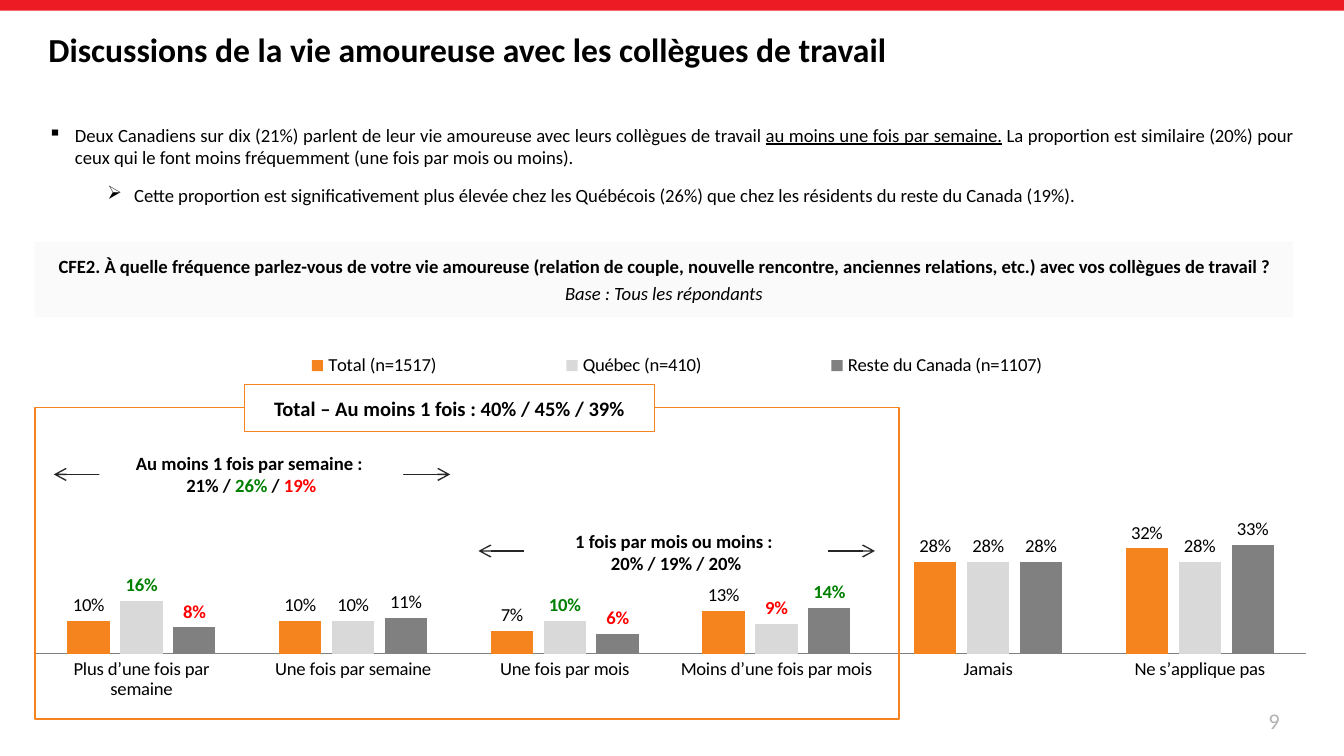
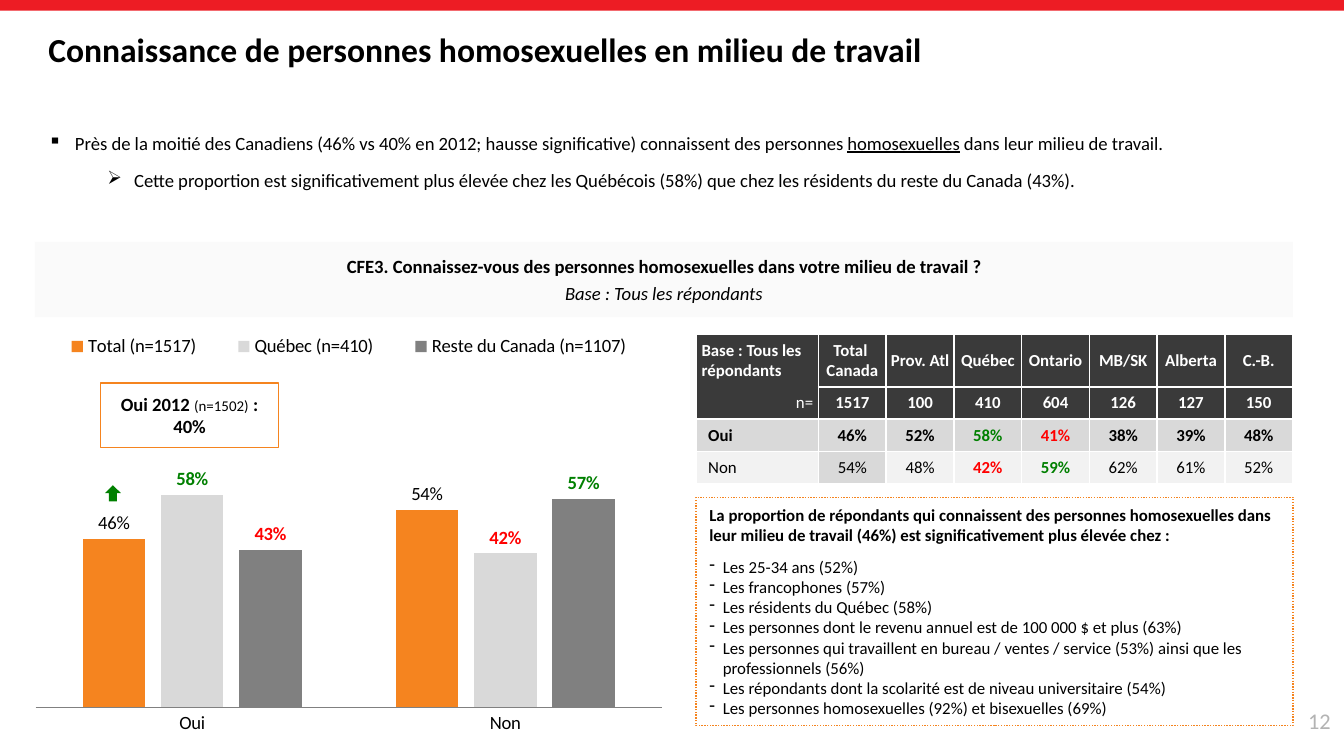
"""Build two survey-result slides about love life and homosexuality at work."""
from lxml.etree import SubElement
from pptx import Presentation
from pptx.chart.data import CategoryChartData
from pptx.dml.color import RGBColor
from pptx.enum.chart import XL_CHART_TYPE, XL_LABEL_POSITION, XL_LEGEND_POSITION, XL_TICK_MARK
from pptx.enum.dml import MSO_LINE
from pptx.enum.shapes import MSO_CONNECTOR, MSO_SHAPE as SHAPE
from pptx.enum.text import MSO_ANCHOR as ANCHOR, PP_ALIGN as ALIGN
from pptx.oxml.ns import qn
from pptx.util import Inches, Pt

RED_BAND, ORANGE, LIGHT, GREY = "ED1C24", "F5841F", "D9D9D9", "808080"
BLACK, WHITE, GREEN, RED = "000000", "FFFFFF", "008000", "FF0000"
DARK, PALE, PANEL, NUMBER, INK = "3A3A3A", "F2F2F2", "FAFAFA", "B3B3B3", "262626"
FONT = "Calibri"
rgb = RGBColor.from_string


def write(frame, lines, size=10, bold=False, color=BLACK, align=ALIGN.CENTER,
          anchor=ANCHOR.MIDDLE, before=None, after=None, bullets=(), hang=0.2):
    """Fill a text frame; a line is a list of strings or (string, font changes)."""
    frame.word_wrap = True
    frame.vertical_anchor = anchor
    for index, line in enumerate(lines):
        para = frame.paragraphs[0] if index == 0 else frame.add_paragraph()
        para.alignment = align
        if before and index:
            para.space_before = Pt(before)
        if after:
            para.space_after = Pt(after)
        bullet = bullets[index] if index < len(bullets) else None
        if bullet:
            mark, left = bullet
            props = para._p.get_or_add_pPr()
            props.set("marL", str(Inches(left)))
            props.set("indent", str(-Inches(hang)))
            SubElement(props, qn("a:buChar"), char=mark)
        para.font.name, para.font.size, para.font.bold = FONT, Pt(size), bold
        para.font.color.rgb = rgb(color)
        for part in line:
            text, changes = (part, {}) if isinstance(part, str) else part
            span = para.add_run()
            span.text = text
            if bullet:
                span.font.size = Pt(size)
            for name, value in changes.items():
                if name == "color":
                    span.font.color.rgb = rgb(value)
                else:
                    setattr(span.font, name, value)


def add_box(page, at, fill=None, line=None, kind=SHAPE.RECTANGLE):
    """Add a preset shape without shadow."""
    box = page.shapes.add_shape(kind, *map(Inches, at))
    box.shadow.inherit = False
    if fill:
        box.fill.solid()
        box.fill.fore_color.rgb = rgb(fill)
    else:
        box.fill.background()
    if line:
        box.line.color.rgb = rgb(line)
        box.line.width = Pt(0.75)
    else:
        box.line.fill.background()
    return box


SERIES = [("Total (n=1517)", ORANGE), ("Québec (n=410)", LIGHT), ("Reste du Canada (n=1107)", GREY)]
SLIDES = [
    dict(
        title="Discussions de la vie amoureuse avec les collègues de travail",
        number="9", number_left=7.29, body_top=0.87,
        body=[
            ["Deux Canadiens sur dix (21%) parlent de leur vie amoureuse avec leurs collègues de travail ",
             ("au moins une fois par semaine.", {"underline": True}),
             " La proportion est similaire (20%) pour ceux qui le font moins fréquemment "
             "(une fois par mois ou moins). "],
            ["Cette proportion est significativement plus élevée chez les Québécois (26%) "
             "que chez les résidents du reste du Canada (19%)."]],
        question="CFE2. À quelle fréquence parlez-vous de votre vie amoureuse (relation de couple, "
                 "nouvelle rencontre, anciennes relations, etc.) avec vos collègues de travail ?",
        chart_at=(0.26, 2.31, 9.46, 2.9), legend_at=(0.12, 0.1, 0.77, 0.09),
        categories=["Plus d’une fois par semaine", "Une fois par semaine", "Une fois par mois",
                    "Moins d’une fois par mois", "Jamais", "Ne s’applique pas"],
        values=[(0.1, 0.1, 0.07, 0.13, 0.28, 0.32), (0.16, 0.1, 0.1, 0.09, 0.28, 0.28),
                (0.08, 0.11, 0.06, 0.14, 0.28, 0.33)],
        significant=(0, 2, 3)),
    dict(
        title="Connaissance de personnes homosexuelles en milieu de travail",
        number="12", number_left=7.67, body_top=0.93,
        body=[
            ["Près de la moitié des Canadiens (46% vs 40% en 2012; hausse significative) "
             "connaissent des personnes ",
             ("homosexuelles", {"underline": True}), " dans leur milieu de travail. "],
            ["Cette proportion est significativement plus élevée chez les Québécois (58%) "
             "que chez les résidents du reste du Canada (43%)."]],
        question="CFE3. Connaissez-vous des personnes homosexuelles dans votre milieu de travail ?",
        chart_at=(0.26, 2.42, 4.67, 3.16), legend_at=(0, 0.01, 1, 0.08),
        categories=["Oui", "Non"],
        values=[(0.46, 0.54), (0.58, 0.42), (0.43, 0.57)],
        significant=(0, 1)),
]

deck = Presentation()
deck.slide_width = Inches(10)
deck.slide_height = deck.slide_width * 9 // 16
pages = []
for content in SLIDES:
    page = deck.slides.add_slide(deck.slide_layouts[5])
    pages.append(page)
    add_box(page, (0, 0, 10, 0.08), RED_BAND)
    title = page.shapes.title
    title.left, title.top, title.width, title.height = map(Inches, (0.26, 0.08, 7.92, 0.57))
    write(title.text_frame, [[content["title"]]], 18, True, align=ALIGN.LEFT)
    number = page.shapes.add_textbox(*map(Inches, (content["number_left"], 5.21, 2.33, 0.3)))
    write(number.text_frame, [[content["number"]]], 12, color=NUMBER, align=ALIGN.RIGHT)
    top = content["body_top"]
    body = page.shapes.add_textbox(*map(Inches, (0.26, top, 9.46, 1.72 - top)))
    write(body.text_frame, content["body"], align=ALIGN.JUSTIFY, anchor=ANCHOR.TOP,
          before=2, after=6, bullets=[("▪", 0.2), ("➢", 0.64)])
    panel = add_box(page, (0.26, 1.8, 9.36, 0.56), PANEL)
    base = ("Base : Tous les répondants", {"bold": False, "italic": True})
    write(panel.text_frame, [[content["question"]], [base]], bold=True, before=2)

    data = CategoryChartData(number_format="0%")
    data.categories = content["categories"]
    for (name, _), values in zip(SERIES, content["values"]):
        data.add_series(name, values)
    chart = page.shapes.add_chart(XL_CHART_TYPE.COLUMN_CLUSTERED,
                                  *map(Inches, content["chart_at"]), data).chart
    chart.has_title = False
    chart.font.name, chart.font.size = "Arial", Pt(9)
    chart.font.color.rgb = rgb(BLACK)
    chart.has_legend = True
    chart.legend.position = XL_LEGEND_POSITION.TOP
    chart.legend.include_in_layout = False
    chart.legend.font.name, chart.legend.font.size = FONT, Pt(10)
    axis = chart.category_axis
    axis.major_tick_mark = axis.minor_tick_mark = XL_TICK_MARK.NONE
    axis.tick_labels.font.name, axis.tick_labels.font.size = FONT, Pt(10)
    axis.format.line.color.rgb = rgb(GREY)
    scale = chart.value_axis
    scale.minimum_scale, scale.maximum_scale, scale.major_unit = 0, 0.8, 0.1
    scale.has_major_gridlines = False
    scale.visible = False
    plot = chart.plots[0]
    plot.gap_width, plot.overlap, plot.vary_by_categories = 150, -25, False
    for rank, (series, (_, color)) in enumerate(zip(plot.series, SERIES)):
        series.format.fill.solid()
        series.format.fill.fore_color.rgb = rgb(color)
        labels = series.data_labels
        labels.show_value = True
        labels.number_format, labels.number_format_is_linked = "0%", False
        labels.position = XL_LABEL_POSITION.OUTSIDE_END
        labels.font.name, labels.font.size = FONT, Pt(10)
        labels.font.color.rgb = rgb(BLACK)
        if rank == 0:
            continue
        for index in content["significant"]:
            own, other = content["values"][rank][index], content["values"][3 - rank][index]
            label = series.points[index].data_label
            label.font.name, label.font.size, label.font.bold = FONT, Pt(10), True
            label.font.color.rgb = rgb(GREEN if own > other else RED)
            label.position = XL_LABEL_POSITION.OUTSIDE_END

    area = chart._chartSpace.find(".//" + qn("c:plotArea"))
    for old in area.findall(qn("c:layout")):
        area.remove(old)
    for holder, place, inner, spot in ((area, 0, True, (0, 0.21, 1, 0.69)),
                                       (chart.legend._element, 1, False, content["legend_at"])):
        layout = SubElement(holder, qn("c:layout"))
        holder.insert(place, layout)
        manual = SubElement(layout, qn("c:manualLayout"))
        if inner:
            SubElement(manual, qn("c:layoutTarget"), val="inner")
        for mode in ("xMode", "yMode"):
            SubElement(manual, qn("c:" + mode), val="edge")
        for side, share in zip("xywh", spot):
            SubElement(manual, qn("c:" + side), val=str(share))

frequency, acquaintance = pages

GROUPS = [
    (0.4, 3.53, 0.74, 3.32, [["Au moins 1 fois par semaine : "],
                             ["21% / ", ("26%", {"color": GREEN}), " / ", ("19%", {"color": RED})]]),
    (3.56, 4.1, 3.9, 3.9, [["1 fois par mois ou moins : "], ["20% / 19% / 20%"]]),
]
for start, height, left, top, lines in GROUPS:
    arrow = frequency.shapes.add_connector(
        MSO_CONNECTOR.STRAIGHT, *map(Inches, (start, height, start + 2.95, height)))
    arrow.line.color.rgb = rgb(INK)
    arrow.line.width = Pt(0.75)
    for end in ("a:headEnd", "a:tailEnd"):
        SubElement(arrow.line._get_or_add_ln(), qn(end), type="arrow")
    SubElement(arrow._element.spPr, qn("a:effectLst"))
    box = add_box(frequency, (left, top, 2.26, 0.42), WHITE)
    frame = box.text_frame
    frame.margin_left = frame.margin_right = frame.margin_top = frame.margin_bottom = Inches(0.04)
    write(frame, lines, bold=True, anchor=ANCHOR.TOP)
add_box(frequency, (0.26, 3.03, 6.43, 2.32), line=ORANGE)
total = add_box(frequency, (1.82, 2.86, 3.05, 0.35), WHITE, ORANGE, SHAPE.FLOWCHART_PROCESS)
write(total.text_frame, [["Total – Au moins 1 fois : 40% / 45% / 39%"]], 11, True)

ROWS = [
    ["Base : Tous les répondants", "Total \nCanada", "Prov. Atl", "Québec", "Ontario", "MB/SK", "Alberta", "C.-B."],
    ["n=", "1517", "100", "410", "604", "126", "127", "150"],
    ["Oui", "46%", "52%", "58%", "41%", "38%", "39%", "48%"],
    ["Non", "54%", "48%", "42%", "59%", "62%", "61%", "52%"],
]
MARKED = {(2, 3): GREEN, (2, 4): RED, (3, 3): RED, (3, 4): GREEN}
FILLS = [DARK, DARK, LIGHT, PALE]
table = acquaintance.shapes.add_table(4, 8, *map(Inches, (5.18, 2.49, 4.44, 1.1))).table
for index, column in enumerate(table.columns):
    column.width = Inches((4.44 - 0.91) / 7 if index else 0.91)
for r, texts in enumerate(ROWS):
    table.rows[r].height = Inches(0.24 if r else 0.39)
    for c, text in enumerate(texts):
        cell = table.cell(r, c)
        props = cell._tc.get_or_add_tcPr()
        for side in "LRTB":
            thick = (r, side) in ((1, "B"), (2, "T"))
            edge = SubElement(props, qn("a:ln" + side), w=str(Pt(1.5 if thick else 1)))
            if c == 0 and (r, side) in ((0, "B"), (1, "T")):
                SubElement(edge, qn("a:noFill"))
            else:
                SubElement(SubElement(edge, qn("a:solidFill")), qn("a:srgbClr"), val=WHITE)
        cell.fill.solid()
        cell.fill.fore_color.rgb = rgb(LIGHT if (r, c) == (3, 1) else FILLS[r])
        cell.margin_top = cell.margin_bottom = 0
        side_margin = 0.01 if c else 0.04 if r < 2 else 0.09
        cell.margin_left = cell.margin_right = Inches(side_margin)
        align = ALIGN.CENTER if c else ALIGN.RIGHT if r == 1 else ALIGN.LEFT
        write(cell.text_frame, [[line] for line in text.split("\n")], 9,
              (r, c) in MARKED or (r < 3 and text != "n="),
              MARKED.get((r, c), WHITE if r < 2 else BLACK), align)
        cell.vertical_anchor = ANCHOR.MIDDLE

PROFILES = [
    "La proportion de répondants qui connaissent des personnes homosexuelles dans leur milieu "
    "de travail (46%) est significativement plus élevée chez :",
    "Les 25-34 ans (52%)",
    "Les francophones (57%)",
    "Les résidents du Québec (58%)",
    "Les personnes dont le revenu annuel est de 100 000 $ et plus (63%)",
    "Les personnes qui travaillent en bureau / ventes / service (53%) ainsi que les professionnels (56%)",
    "Les répondants dont la scolarité est de niveau universitaire (54%)",
    "Les personnes homosexuelles (92%) et bisexuelles (69%)",
]
profile = add_box(acquaintance, (5.18, 3.7, 4.44, 1.7), line=ORANGE)
profile.line.dash_style = MSO_LINE.ROUND_DOT
write(profile.text_frame, [[text] for text in PROFILES], 9, align=ALIGN.LEFT,
      bullets=[None] + [("-", 0.1)] * 7, hang=0.1)
heading = profile.text_frame.paragraphs[0]
heading.font.bold = True
heading.space_after = Pt(6)

earlier = add_box(acquaintance, (0.75, 2.85, 1.32, 0.48), line=ORANGE, kind=SHAPE.FLOWCHART_PROCESS)
write(earlier.text_frame,
      [["Oui 2012 ", ("(n=1502)", {"size": Pt(8), "bold": False}), " :"], ["40%"]], bold=True)
add_box(acquaintance, (0.78, 3.61, 0.12, 0.12), GREEN, kind=SHAPE.UP_ARROW)

deck.save("out.pptx")
